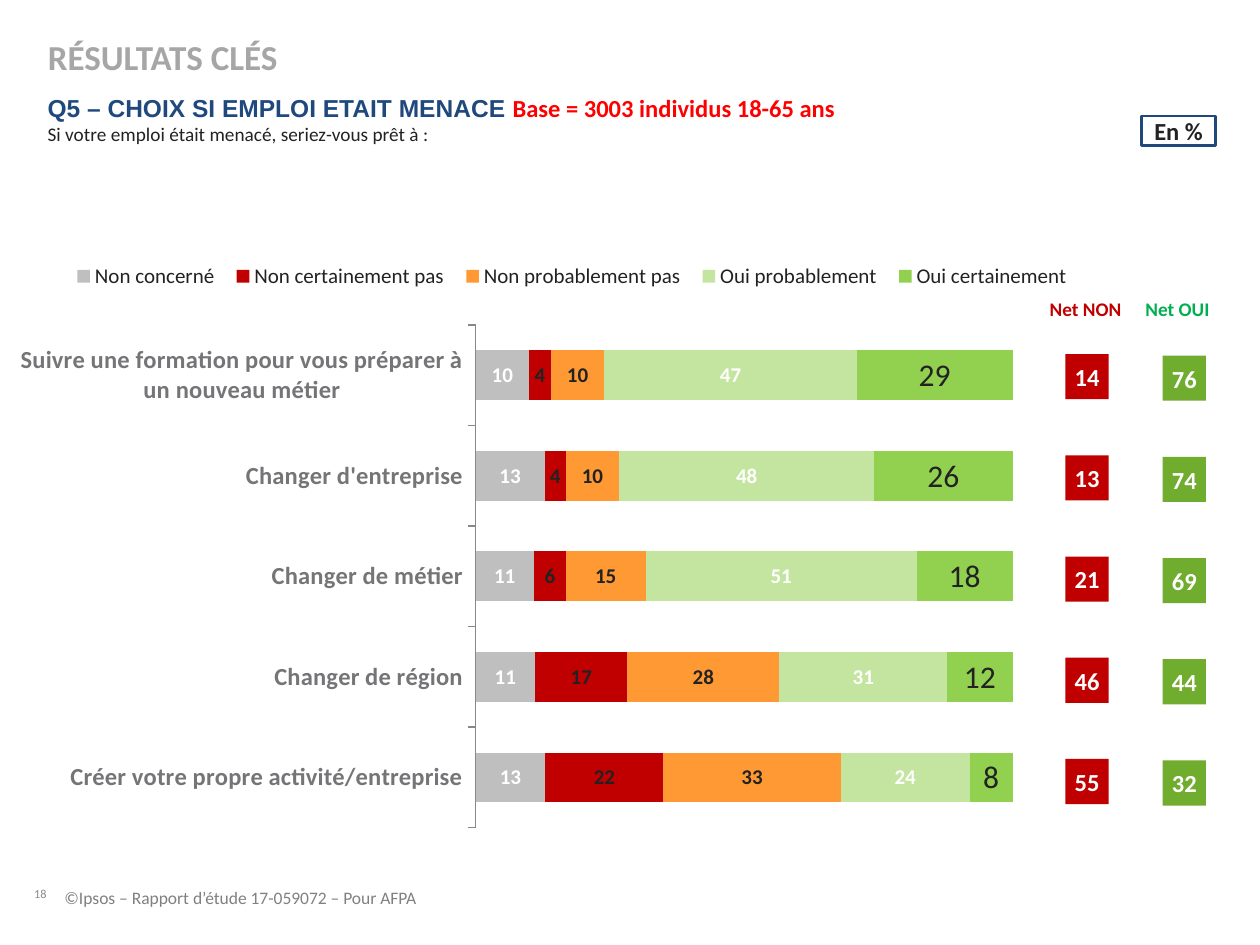
from dataclasses import dataclass

import pptx
import pptx.chart.data
import pptx.dml.color
import pptx.enum.chart
import pptx.enum.shapes
import pptx.enum.text
import pptx.oxml
import pptx.util

Cm, Pt = pptx.util.Cm, pptx.util.Pt
RGBColor = pptx.dml.color.RGBColor
PP_ALIGN = pptx.enum.text.PP_ALIGN
ANCHOR = pptx.enum.text.MSO_ANCHOR

WHITE = RGBColor(0xFF, 0xFF, 0xFF)
INK = RGBColor(0x22, 0x22, 0x23)
NAVY = RGBColor(0x1F, 0x49, 0x7D)
RED = RGBColor(0xFF, 0x00, 0x00)
DARK_RED = RGBColor(0xC0, 0x00, 0x00)
NET_GREEN = RGBColor(0x00, 0xB0, 0x50)
TILE_GREEN = RGBColor(0x70, 0xAC, 0x2E)
TITLE_GREY = RGBColor(0xA6, 0xA6, 0xA6)
AXIS_GREY = RGBColor(0x75, 0x75, 0x78)
LINE_GREY = RGBColor(0x88, 0x88, 0x88)
FOOTER_GREY = RGBColor(0x80, 0x80, 0x80)
PAGE_GREY = RGBColor(0x88, 0x8B, 0x8D)


@dataclass
class Box:
    left: float
    top: float
    width: float
    height: float

    def lengths(self) -> list:
        return [Cm(v) for v in (self.left, self.top, self.width, self.height)]


@dataclass
class Answer:
    name: str
    values: tuple
    color: RGBColor
    label_size: int = 12
    label_color: RGBColor = INK
    label_bold: bool = True


@dataclass
class NetColumn:
    heading: str
    heading_left: float
    heading_color: RGBColor
    tile_left: float
    tile_top: float
    tile_color: RGBColor
    values: tuple


CHOICES = (
    "Créer votre propre activité/entreprise",
    "Changer de région",
    "Changer de métier",
    "Changer d'entreprise",
    "Suivre une formation pour vous préparer à un nouveau métier",
)
ANSWERS = (
    Answer("Non concerné", (13, 11, 11, 13, 10), RGBColor(0xBF, 0xBF, 0xBF), label_color=WHITE),
    Answer("Non certainement pas", (22, 17, 6, 4, 4), DARK_RED),
    Answer("Non probablement pas", (33, 28, 15, 10, 10), RGBColor(0xFF, 0x99, 0x33)),
    Answer("Oui probablement", (24, 31, 51, 48, 47), RGBColor(0xC4, 0xE5, 0x9F), label_color=WHITE),
    Answer("Oui certainement", (8, 12, 18, 26, 29), RGBColor(0x92, 0xD0, 0x50), 18, INK, False),
)
NET_COLUMNS = (
    NetColumn("Net NON", 21.16, DARK_RED, 21.48, 7.14, DARK_RED, (14, 13, 21, 46, 55)),
    NetColumn("Net OUI", 23.09, NET_GREEN, 23.44, 7.17, TILE_GREEN, (76, 74, 69, 44, 32)),
)
TILE_PITCH = 2.04


def set_font(font, size: float, color: RGBColor, bold: bool = False, name: str = "Calibri") -> None:
    for attribute, value in {"name": name, "size": Pt(size), "bold": bold}.items():
        setattr(font, attribute, value)
    font.color.rgb = color


def set_frame(frame, anchor=ANCHOR.TOP, inset: bool = False) -> None:
    settings = {"word_wrap": True, "vertical_anchor": anchor,
                "auto_size": pptx.enum.text.MSO_AUTO_SIZE.NONE}
    if not inset:
        settings |= {f"margin_{side}": 0 for side in ("left", "top", "right", "bottom")}
    for attribute, value in settings.items():
        setattr(frame, attribute, value)


def add_run(paragraph, text: str, *font_values) -> None:
    run = paragraph.add_run()
    run.text = text
    set_font(run.font, *font_values)


def add_text(slide, box: Box, text: str, *font_values, anchor=ANCHOR.TOP) -> None:
    frame = slide.shapes.add_textbox(*box.lengths()).text_frame
    set_frame(frame, anchor)
    add_run(frame.paragraphs[0], text, *font_values)


def add_rectangle(slide, box: Box, text: str, color: RGBColor, fill=None, line=None) -> None:
    rectangle = slide.shapes.add_shape(pptx.enum.shapes.MSO_SHAPE.RECTANGLE, *box.lengths())
    rectangle.shadow.inherit = False
    for part, shade in ((rectangle.fill, fill), (rectangle.line.fill, line)):
        if shade is None:
            part.background()
        else:
            part.solid()
            part.fore_color.rgb = shade
    if line is not None:
        rectangle.line.width = Pt(1.5)
    set_frame(rectangle.text_frame, ANCHOR.MIDDLE)
    paragraph = rectangle.text_frame.paragraphs[0]
    paragraph.alignment = PP_ALIGN.CENTER
    add_run(paragraph, text, 14, color, True)


def add_layout(element, x: float, y: float, w: float, h: float, inner: bool = False) -> None:
    """Give a plot area or legend a fixed place, as fractions of the chart."""
    values = [("layoutTarget", "inner")] if inner else []
    values += [("xMode", "edge"), ("yMode", "edge"), ("x", x), ("y", y), ("w", w), ("h", h)]
    for old in element.findall(pptx.oxml.ns.qn("c:layout")):
        element.remove(old)
    children = "".join(f'<c:{tag} val="{value}"/>' for tag, value in values)
    layout = pptx.oxml.parse_xml(
        f'<c:layout {pptx.oxml.ns.nsdecls("c")}><c:manualLayout>{children}</c:manualLayout></c:layout>')
    element.insert(0 if inner else 1, layout)


def add_answer_chart(slide, box: Box) -> None:
    data = pptx.chart.data.CategoryChartData(number_format="0")
    data.categories = CHOICES
    for answer in ANSWERS:
        data.add_series(answer.name, answer.values)
    chart = slide.shapes.add_chart(
        pptx.enum.chart.XL_CHART_TYPE.BAR_STACKED_100, *box.lengths(), data).chart
    set_font(chart.font, 18, INK)
    chart.has_title = False

    # Axes
    choice_axis = chart.category_axis
    set_font(choice_axis.tick_labels.font, 14, AXIS_GREY, True)
    choice_axis.major_tick_mark = pptx.enum.chart.XL_TICK_MARK.OUTSIDE
    choice_axis.format.line.color.rgb = LINE_GREY
    share_axis = chart.value_axis
    for attribute, value in {"visible": False, "has_major_gridlines": False,
                             "minimum_scale": 0, "maximum_scale": 1}.items():
        setattr(share_axis, attribute, value)

    # Bars
    plot = chart.plots[0]
    for attribute, value in {"gap_width": 102, "overlap": 100, "vary_by_categories": False}.items():
        setattr(plot, attribute, value)
    for series, answer in zip(plot.series, ANSWERS):
        series.format.fill.solid()
        series.format.fill.fore_color.rgb = answer.color
        series.data_labels.show_value = True
        set_font(series.data_labels.font, answer.label_size, answer.label_color, answer.label_bold)

    # Legend and placement
    chart.has_legend = True
    legend = chart.legend
    legend.position = pptx.enum.chart.XL_LEGEND_POSITION.BOTTOM
    legend.include_in_layout = False
    set_font(legend.font, 12, INK)
    plot_area = chart.element.find(".//" + pptx.oxml.ns.qn("c:plotArea"))
    legend_element = chart.element.find(".//" + pptx.oxml.ns.qn("c:legend"))
    add_layout(plot_area, 0.421, 0.153, 0.495, 0.801, inner=True)
    add_layout(legend_element, 0.04, 0.04, 0.94, 0.07)


def main() -> None:
    presentation = pptx.Presentation()
    presentation.slide_width, presentation.slide_height = Cm(25.4), Cm(19.05)
    slide = presentation.slides.add_slide(presentation.slide_layouts[5])

    # Title
    title = slide.shapes.title
    title.left, title.top, title.width, title.height = Box(0.71, 0.53, 19.1, 1.22).lengths()
    set_frame(title.text_frame, ANCHOR.MIDDLE, inset=True)
    heading = title.text_frame.paragraphs[0]
    heading.alignment = PP_ALIGN.LEFT
    add_run(heading, "RÉSULTATS CLÉS", 20, TITLE_GREY, True)

    # Question and unit
    question = slide.shapes.add_textbox(*Box(0.71, 1.75, 22, 2.39).lengths()).text_frame
    set_frame(question, inset=True)
    topic = question.paragraphs[0]
    add_run(topic, "Q5 – CHOIX SI EMPLOI ETAIT MENACE ", 14, NAVY, True, "Arial")
    add_run(topic, "Base = 3003 individus 18-65 ans", 14, RED, True)
    add_run(question.add_paragraph(), "Si votre emploi était menacé, seriez-vous prêt à :", 11, INK)
    add_rectangle(slide, Box(23.01, 2.34, 1.5, 0.6), "En %", INK, line=NAVY)

    add_answer_chart(slide, Box(0.38, 4.62, 21.87, 12.65))

    # Net scores
    for column in NET_COLUMNS:
        add_text(slide, Box(column.heading_left, 5.99, 1.68, 0.48),
                 column.heading, 11, column.heading_color, True)
        for row, value in enumerate(column.values):
            tile = Box(column.tile_left, column.tile_top + row * TILE_PITCH, 0.87, 0.91)
            add_rectangle(slide, tile, str(value), WHITE, fill=column.tile_color)

    # Footer
    add_text(slide, Box(0.69, 17.25, 0.55, 0.91), "18", 7, PAGE_GREY, anchor=ANCHOR.BOTTOM)
    add_text(slide, Box(1.3, 17.88, 13.06, 0.6),
             "©Ipsos – Rapport d’étude 17-059072 – Pour AFPA", 10, FOOTER_GREY)

    presentation.save("out.pptx")


if __name__ == "__main__":
    main()
